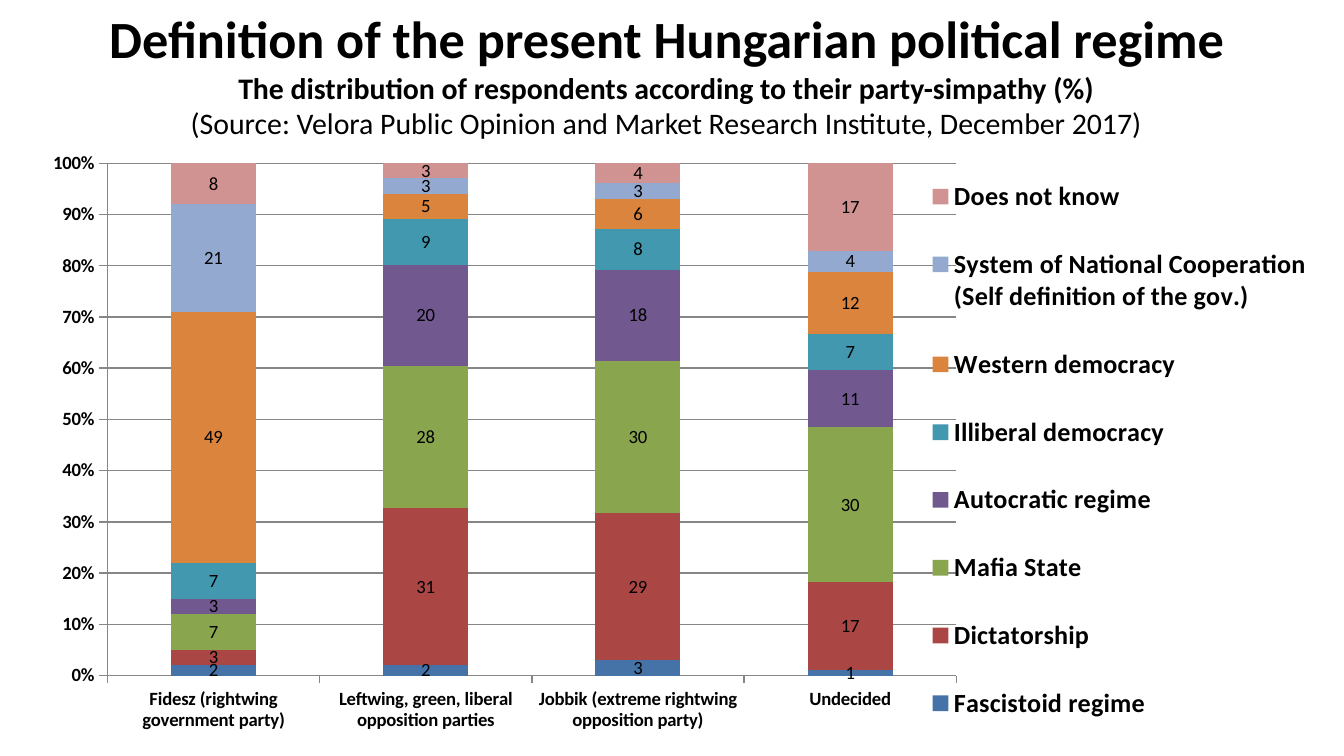
from lxml import etree
from pptx import Presentation
from pptx.chart.data import CategoryChartData
from pptx.dml.color import RGBColor
from pptx.enum.chart import XL_CHART_TYPE as Chart, XL_LEGEND_POSITION as Legend
from pptx.enum.chart import XL_LABEL_POSITION as Label, XL_TICK_MARK as Tick
from pptx.enum.text import MSO_AUTO_SIZE as AutoSize, PP_ALIGN as Align
from pptx.oxml.ns import qn
from pptx.util import Pt

PX = 914400 / 134.4

HEADING = [
    ("Definition of the present Hungarian political regime", 28, True),
    ("The distribution of respondents according to their party-simpathy (%)", 16, True),
    ("(Source: Velora Public Opinion and Market Research Institute, December 2017)", 16, False),
]
PARTIES = [
    "Fidesz (rightwing government party)",
    "Leftwing, green, liberal opposition parties",
    "Jobbik (extreme rightwing opposition party)",
    "Undecided",
]
REGIMES = [
    ("Fascistoid regime", (2, 2, 3, 1), "4572A7"),
    ("Dictatorship", (3, 31, 29, 17), "AA4643"),
    ("Mafia State", (7, 28, 30, 30), "89A54E"),
    ("Autocratic regime", (3, 20, 18, 11), "71588F"),
    ("Illiberal democracy", (7, 9, 8, 7), "4198AF"),
    ("Western democracy", (49, 5, 6, 12), "DB843D"),
    ("System of National Cooperation (Self definition of the gov.)", (21, 3, 3, 4), "93A9CF"),
    ("Does not know", (8, 3, 4, 17), "D19392"),
]


def px(n):
    return round(n * PX)


def rgb(color):
    return RGBColor.from_string(color)


def set_layout(parent, index, x, y, w, h, inner=False):
    """Place a chart part by fractions of the chart's size."""
    for old in parent.findall(qn("c:layout")):
        parent.remove(old)
    layout = etree.Element(qn("c:layout"))
    manual = etree.SubElement(layout, qn("c:manualLayout"))
    values = [("layoutTarget", "inner")] if inner else []
    values += [("xMode", "edge"), ("yMode", "edge"), ("x", x), ("y", y), ("w", w), ("h", h)]
    for tag, value in values:
        etree.SubElement(manual, qn("c:" + tag)).set("val", str(value))
    parent.insert(index, layout)


class Deck:
    font = "Calibri"
    ink = "000000"
    grid = "868686"

    def __init__(self, width, height):
        self.prs = Presentation()
        self.prs.slide_width, self.prs.slide_height = px(width), px(height)
        self.s = self.prs.slides.add_slide(self.prs.slide_layouts[6])

    def style(self, font, size, bold=False):
        font.name, font.size, font.bold = self.font, Pt(size), bold
        font.color.rgb = rgb(self.ink)

    def text(self, x, y, w, h, lines):
        tf = self.s.shapes.add_textbox(px(x), px(y), px(w), px(h)).text_frame
        tf.word_wrap = True
        tf.auto_size = AutoSize.SHAPE_TO_FIT_TEXT
        tf.text = "\n".join(line for line, _, _ in lines)
        for p, (_, size, bold) in zip(tf.paragraphs, lines):
            p.alignment = Align.CENTER
            self.style(p.runs[0].font, size, bold)

    def axis(self, axis):
        axis.major_tick_mark = Tick.OUTSIDE
        axis.minor_tick_mark = Tick.NONE
        axis.format.line.color.rgb = rgb(self.grid)
        self.style(axis.tick_labels.font, 10, True)

    def stacked_chart(self, x, y, w, h, categories, series):
        data = CategoryChartData()
        data.categories = categories
        for name, values, _ in series:
            data.add_series(name, values)
        chart = self.s.shapes.add_chart(
            Chart.COLUMN_STACKED_100, px(x), px(y), px(w), px(h), data).chart
        chart.has_title = False
        self.style(chart.font, 10)

        plot = chart.plots[0]
        plot.gap_width, plot.overlap = 150, 100
        plot.vary_by_categories = False
        for item, (_, _, color) in zip(plot.series, series):
            item.format.fill.solid()
            item.format.fill.fore_color.rgb = rgb(color)
            labels = item.data_labels
            labels.show_value = True
            labels.position = Label.CENTER
            self.style(labels.font, 10)

        self.axis(chart.category_axis)
        values = chart.value_axis
        self.axis(values)
        values.minimum_scale, values.maximum_scale, values.major_unit = 0, 1, 0.1
        values.tick_labels.number_format = "0%"
        values.tick_labels.number_format_is_linked = False
        values.has_major_gridlines = True
        values.major_gridlines.format.line.color.rgb = rgb(self.grid)

        chart.has_legend = True
        legend = chart.legend
        legend.position = Legend.RIGHT
        legend.include_in_layout = False
        self.style(legend.font, 14, True)
        plot_area = chart.element.find(".//" + qn("c:plotArea"))
        set_layout(plot_area, 0, 0.07, 0.03, 0.65, 0.84, inner=True)
        set_layout(chart.element.find(".//" + qn("c:legend")), 1, 0.69, 0, 0.31, 1)


def main():
    deck = Deck(1344, 756)
    deck.stacked_chart(16, 145, 1306, 610, PARTIES, REGIMES)
    deck.text(79, 0, 1175, 149, HEADING)
    deck.prs.save("out.pptx")


if __name__ == "__main__":
    main()
